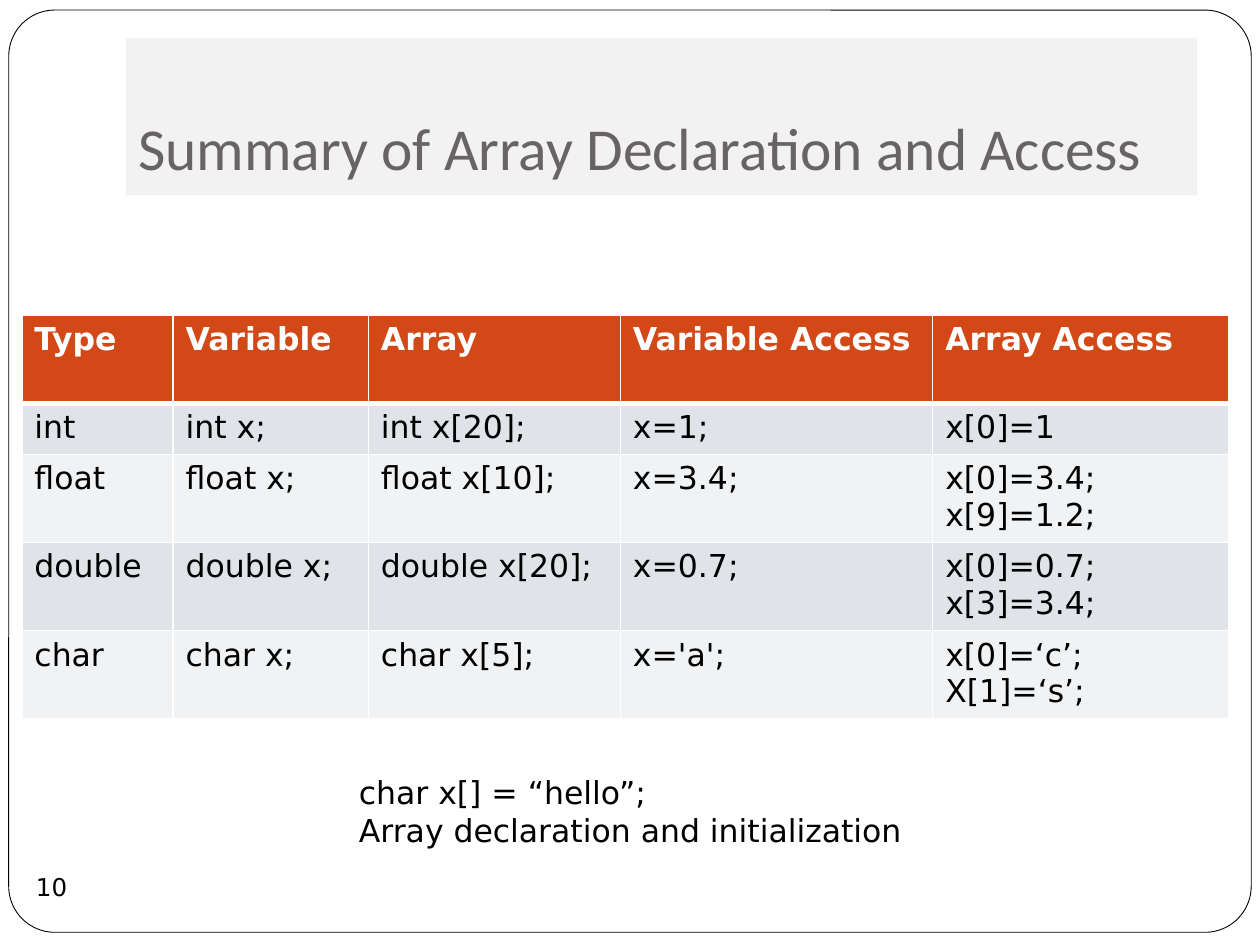
from dataclasses import dataclass

from lxml import etree
from pptx import Presentation
from pptx import util as u
from pptx.dml.color import RGBColor
from pptx.enum import shapes, text
from pptx.oxml import ns


@dataclass(frozen=True)
class Theme:
    white: str = "FFFFFF"
    black: str = "000000"
    panel: str = "F2F2F2"
    title: str = "696464"
    head: str = "D34817"
    bands: tuple = ("E0E4E9", "F0F2F4")
    sans: str = "Calibri"
    body: str = "DejaVu Sans"
    big: float = 34
    mid: float = 18
    small: float = 14


THEME = Theme()
COLS = (86.4, 111.6, 144, 178.5, 169)
ROWS = (50.4, 29.2, 50.4, 50.4, 50.4)
GRID = (
    ("Type", "Variable", "Array", "Variable Access", "Array Access"),
    ("int", "int x;", "int x[20];", "x=1;", "x[0]=1"),
    ("float", "float x;", "float x[10];", "x=3.4;", "x[0]=3.4;\nx[9]=1.2;"),
    ("double", "double x;", "double x[20];", "x=0.7;", "x[0]=0.7;\nx[3]=3.4;"),
    ("char", "char x;", "char x[5];", "x='a';", "x[0]=‘c’;\nX[1]=‘s’;"),
)


def rgb(code):
    return RGBColor.from_string(code)


def write(frame, words, size, color, font=THEME.body, bold=False,
          align=text.PP_ALIGN.LEFT):
    """Fill a text frame, one paragraph for each line of words."""
    for num, line in enumerate(words.split("\n")):
        para = frame.add_paragraph() if num else frame.paragraphs[0]
        para.alignment = align
        run = para.add_run()
        run.text = line
        run.font.name = font
        run.font.size = u.Pt(size)
        run.font.bold = bold
        run.font.color.rgb = rgb(color)


def inset(frame, left, top, right, bottom):
    frame.margin_left, frame.margin_top = u.Pt(left), u.Pt(top)
    frame.margin_right, frame.margin_bottom = u.Pt(right), u.Pt(bottom)


def add_shape(slide, kind, box, fill=None, line=None):
    shape = slide.shapes.add_shape(kind, *map(u.Pt, box))
    shape.shadow.inherit = False
    if fill:
        shape.fill.solid()
        shape.fill.fore_color.rgb = rgb(fill)
    else:
        shape.fill.background()
    if line:
        shape.line.color.rgb = rgb(line)
        shape.line.width = u.Pt(0.5)
    else:
        shape.line.fill.background()
    return shape


def add_frame(slide):
    """Draw the rounded outline around the slide."""
    frame = add_shape(slide, shapes.MSO_SHAPE.ROUNDED_RECTANGLE,
                      (5, 5.75, 710, 527), THEME.white, THEME.black)
    frame.adjustments[0] = 0.05


def add_title(slide, words):
    panel = add_shape(slide, shapes.MSO_SHAPE.RECTANGLE,
                      (72, 21.6, 612, 90), THEME.panel)
    frame = panel.text_frame
    frame.word_wrap = True
    frame.vertical_anchor = text.MSO_ANCHOR.BOTTOM
    inset(frame, 7.2, 3.6, 7.2, 7.2)
    write(frame, words, THEME.big, THEME.title, THEME.sans)


def add_page(slide, words):
    """Add the page number in its unfilled circle."""
    disc = add_shape(slide, shapes.MSO_SHAPE.OVAL, (11.5, 489, 36, 36))
    frame = disc.text_frame
    frame.word_wrap = False
    frame.vertical_anchor = text.MSO_ANCHOR.MIDDLE
    inset(frame, 0, 0, 0, 0)
    write(frame, words, THEME.small, THEME.black,
          align=text.PP_ALIGN.CENTER)


def add_edge(cell, side, width):
    props = cell._tc.get_or_add_tcPr()
    edge = etree.SubElement(props, ns.qn(f"a:ln{side}"), w=str(u.Pt(width)))
    fill = etree.SubElement(edge, ns.qn("a:solidFill"))
    etree.SubElement(fill, ns.qn("a:srgbClr"), val=THEME.white)


def style_cell(cell, row):
    """Set borders first, since the schema puts them before the fill."""
    thick = {(0, "B"), (1, "T")}
    for side in "LRTB":
        add_edge(cell, side, 3 if (row, side) in thick else 1)
    cell.fill.solid()
    code = THEME.bands[(row - 1) % 2] if row else THEME.head
    cell.fill.fore_color.rgb = rgb(code)


def add_grid(slide):
    box = (12.5, 180, sum(COLS), sum(ROWS))
    table = slide.shapes.add_table(len(ROWS), len(COLS),
                                   *map(u.Pt, box)).table
    for col, width in zip(table.columns, COLS):
        col.width = u.Pt(width)
    for num, (row, height) in enumerate(zip(table.rows, ROWS)):
        row.height = u.Pt(height)
        for cell, words in zip(row.cells, GRID[num]):
            style_cell(cell, num)
            color = THEME.black if num else THEME.white
            write(cell.text_frame, words, THEME.mid, color, bold=num == 0)


def add_note(slide, words):
    box = slide.shapes.add_textbox(*map(u.Pt, (198, 438, 327, 51)))
    frame = box.text_frame
    frame.word_wrap = False
    frame.auto_size = text.MSO_AUTO_SIZE.SHAPE_TO_FIT_TEXT
    write(frame, words, THEME.mid, THEME.black)


def main():
    deck = Presentation()
    deck.slide_width, deck.slide_height = u.Pt(720), u.Pt(540)
    slide = deck.slides.add_slide(deck.slide_layouts[6])
    add_frame(slide)
    add_title(slide, "Summary of Array Declaration and Access")
    add_page(slide, "10")
    add_grid(slide)
    add_note(slide, "char x[] = “hello”;\nArray declaration and initialization")
    deck.save("out.pptx")


if __name__ == "__main__":
    main()
